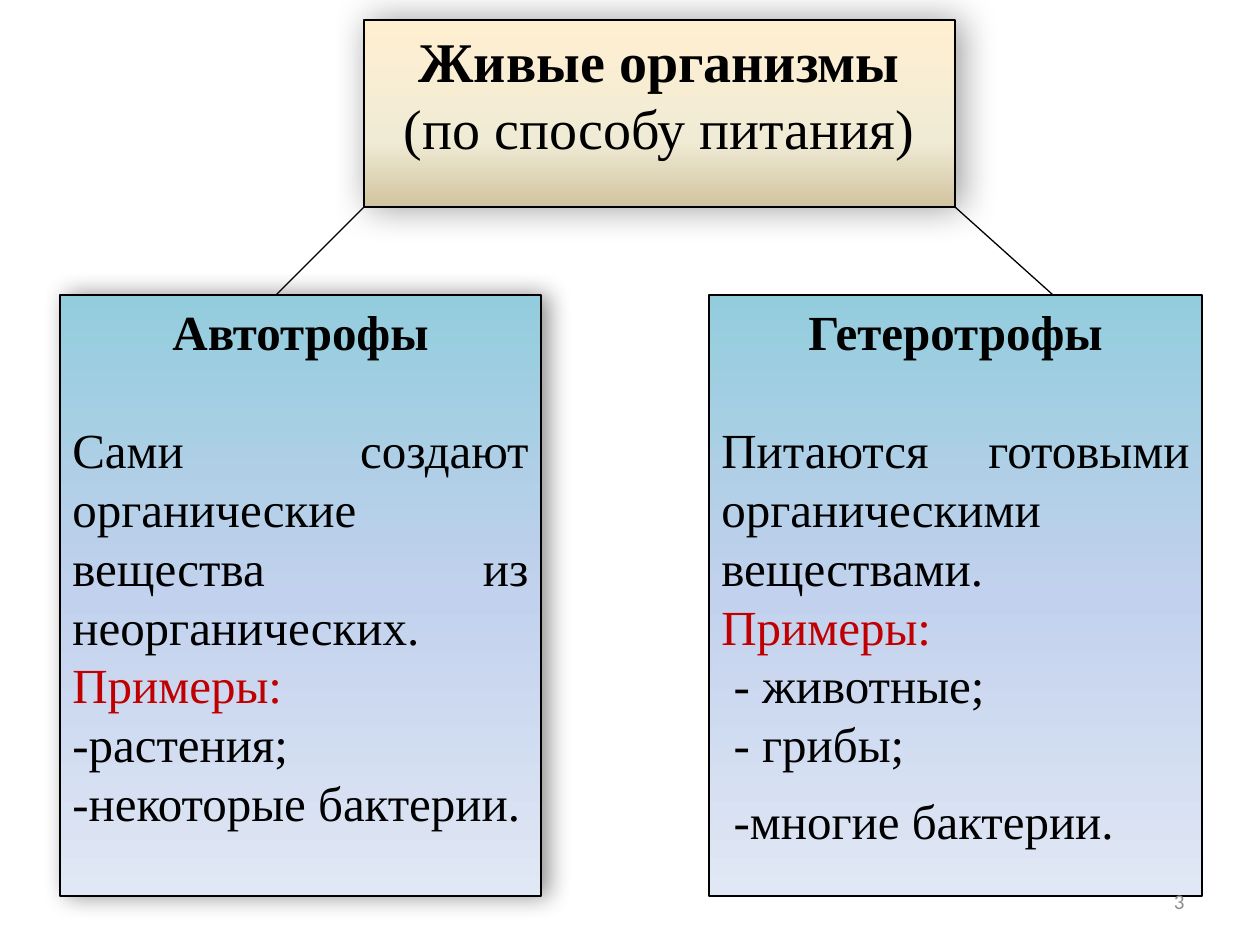
from dataclasses import dataclass
from typing import Optional

from lxml import etree
from pptx import Presentation
from pptx import util as u
from pptx.dml.color import RGBColor
from pptx.enum import shapes, text
from pptx.oxml.ns import qn

PX_PER_INCH = 126
BLACK = RGBColor(0x00, 0x00, 0x00)
RED = RGBColor(0xC0, 0x00, 0x00)
GREY = RGBColor(0x8C, 0x8C, 0x8C)
SAND = (
    (0, RGBColor(0xFF, 0xEF, 0xD1)),
    (65, RGBColor(0xF0, 0xEB, 0xD5)),
    (100, RGBColor(0xD1, 0xC3, 0x9F)),
)
BLUE = (
    (0, RGBColor(0x93, 0xCD, 0xDD)),
    (50, RGBColor(0xC2, 0xD1, 0xED)),
    (100, RGBColor(0xE1, 0xE8, 0xF5)),
)
SERIF = "Times New Roman"
LEFT, CENTER, RIGHT, JUSTIFY = (
    text.PP_ALIGN.LEFT, text.PP_ALIGN.CENTER, text.PP_ALIGN.RIGHT, text.PP_ALIGN.JUSTIFY
)


@dataclass(frozen=True)
class Line:
    words: str
    align: text.PP_ALIGN = LEFT
    size: int = 28
    bold: bool = False
    color: RGBColor = BLACK
    font: str = SERIF
    before: int = 0
    after: int = 0


@dataclass(frozen=True)
class Shadow:
    """Blur and distance in points, opacity in percent."""
    opacity: int
    blur: int
    distance: int


@dataclass(frozen=True)
class Card:
    frame: tuple[int, int, int, int]
    stops: tuple[tuple[int, RGBColor], ...]
    shadow: Optional[Shadow]
    lines: tuple[Line, ...]


def heading(words: str) -> Line:
    return Line(words, CENTER, bold=True, before=12, after=34)


TITLE = Card((364, 20, 591, 187), SAND, Shadow(40, 21, 3), (
    Line("Живые организмы", CENTER, 32, bold=True),
    Line("(по способу питания)", CENTER, 32),
))
GROUPS = (
    Card((60, 295, 481, 601), BLUE, Shadow(43, 14, 4), (
        heading("Автотрофы"),
        Line("Сами создают органические вещества из неорганических.", JUSTIFY),
        Line("Примеры:", color=RED),
        Line("-растения;"),
        Line("-некоторые бактерии.", after=10),
    )),
    Card((709, 295, 493, 601), BLUE, None, (
        heading("Гетеротрофы"),
        Line("Питаются готовыми органическими веществами.", JUSTIFY),
        Line("Примеры:", JUSTIFY, color=RED),
        Line(" - животные;", JUSTIFY),
        Line(" - грибы;", JUSTIFY, after=10),
        Line(" -многие бактерии.", JUSTIFY, after=10),
    )),
)
BRANCHES = ((364, 207, 276, 295), (955, 207, 1053, 295))
NUMBER_FRAME = (903, 876, 294, 50)


def px(value: int) -> u.Emu:
    return u.Emu(round(value * u.Inches(1) / PX_PER_INCH))


def apply(target, values: dict) -> None:
    for name, value in values.items():
        setattr(target, name, value)


def write(shape, lines: tuple[Line, ...], anchor=text.MSO_ANCHOR.TOP) -> None:
    frame = shape.text_frame
    apply(frame, {"word_wrap": True, "auto_size": text.MSO_AUTO_SIZE.NONE,
                  "vertical_anchor": anchor})
    for index, line in enumerate(lines):
        para = frame.add_paragraph() if index else frame.paragraphs[0]
        apply(para, {"alignment": line.align, "space_before": u.Pt(line.before),
                     "space_after": u.Pt(line.after)})
        span = para.add_run()
        span.text = line.words
        apply(span.font, {"name": line.font, "size": u.Pt(line.size), "bold": line.bold})
        span.font.color.rgb = line.color


def add_color(parent, color: RGBColor):
    return etree.SubElement(parent, qn("a:srgbClr"), val=str(color))


def fill_gradient(shape, stops: tuple[tuple[int, RGBColor], ...]) -> None:
    """Fill from top to bottom with any number of stops."""
    shape.fill.gradient()
    shape.fill.gradient_angle = 270
    stop_list = shape.element.spPr.find(".//" + qn("a:gsLst"))
    for stop in list(stop_list):
        stop_list.remove(stop)
    for position, color in stops:
        add_color(etree.SubElement(stop_list, qn("a:gs"), pos=str(position * 1000)), color)


def cast_shadow(shape, shadow: Optional[Shadow]) -> None:
    shape.shadow.inherit = False
    if shadow is None:
        return
    outer = etree.SubElement(
        shape.element.spPr.find(qn("a:effectLst")), qn("a:outerShdw"),
        blurRad=str(u.Pt(shadow.blur)), dist=str(u.Pt(shadow.distance)),
        dir="0", algn="ctr", rotWithShape="0",
    )
    etree.SubElement(add_color(outer, BLACK), qn("a:alpha"), val=str(shadow.opacity * 1000))


def format_card(shape, card: Card) -> None:
    apply(shape, dict(zip(("left", "top", "width", "height"), map(px, card.frame))))
    fill_gradient(shape, card.stops)
    shape.line.color.rgb = BLACK
    shape.line.width = u.Pt(0.75)
    cast_shadow(shape, card.shadow)
    write(shape, card.lines)


def add_branch(page, ends: tuple[int, int, int, int]) -> None:
    branch = page.shapes.add_connector(shapes.MSO_CONNECTOR.STRAIGHT, *map(px, ends))
    branch.line.color.rgb = BLACK
    branch.line.width = u.Pt(0.75)
    etree.SubElement(branch.element.spPr, qn("a:effectLst"))


def main() -> None:
    deck = Presentation()
    apply(deck, {"slide_width": u.Inches(10), "slide_height": u.Inches(7.5)})
    page = deck.slides.add_slide(deck.slide_layouts[5])
    format_card(page.shapes.title, TITLE)
    for card in GROUPS:
        box = page.shapes.add_shape(shapes.MSO_SHAPE.RECTANGLE, *map(px, card.frame))
        format_card(box, card)
    for ends in BRANCHES:
        add_branch(page, ends)
    number = page.shapes.add_textbox(*map(px, NUMBER_FRAME))
    write(number, (Line("3", RIGHT, 12, color=GREY, font="Calibri"),), text.MSO_ANCHOR.MIDDLE)
    deck.save("out.pptx")


if __name__ == "__main__":
    main()
